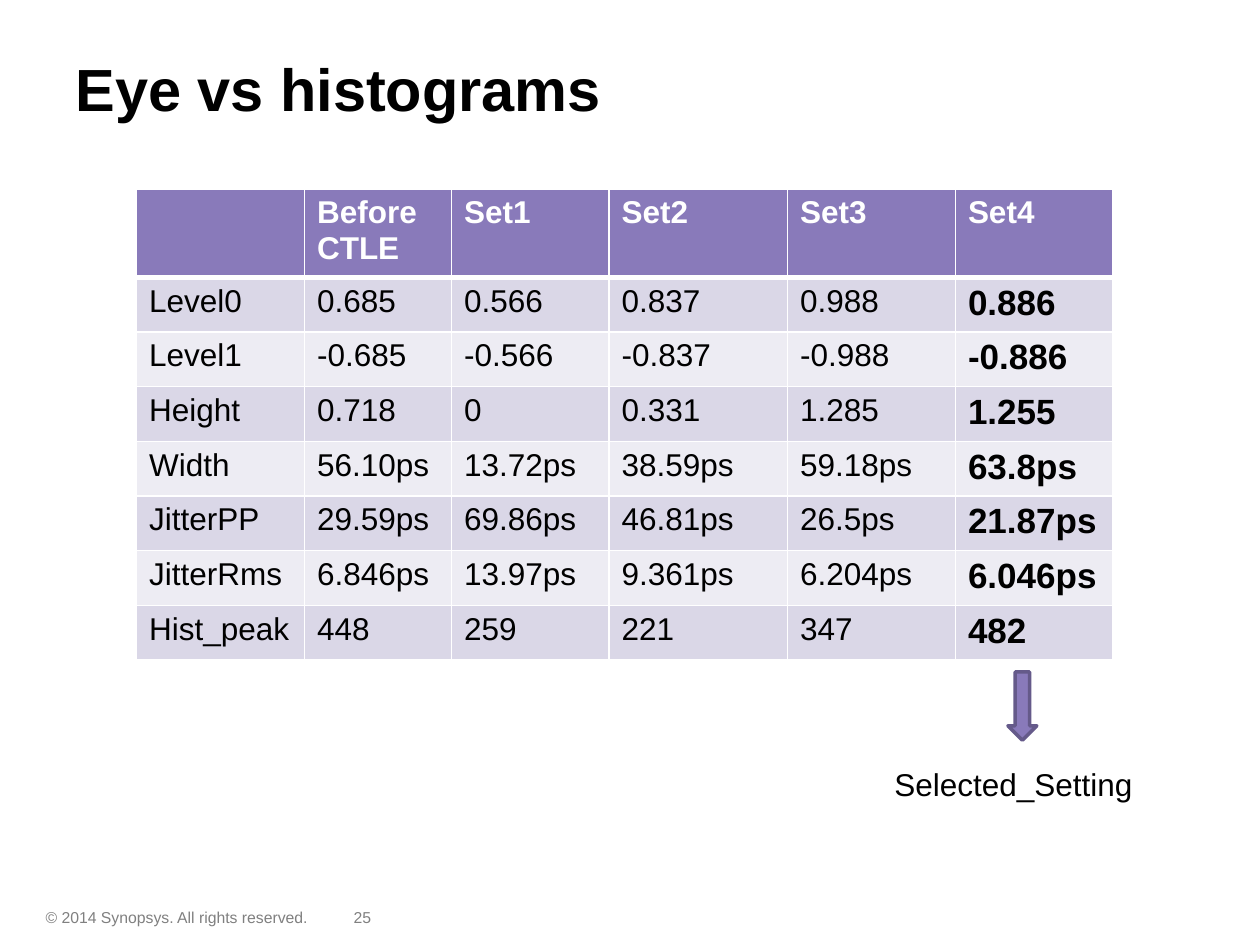
from lxml.etree import SubElement
from pptx import Presentation
from pptx.dml.color import RGBColor
from pptx.enum.shapes import MSO_SHAPE
from pptx.enum.text import MSO_ANCHOR, MSO_AUTO_SIZE, PP_ALIGN
from pptx.oxml.ns import qn
from pptx.util import Pt

BLACK = RGBColor(0x00, 0x00, 0x00)
WHITE = RGBColor(0xFF, 0xFF, 0xFF)
GREY = RGBColor(0x80, 0x80, 0x80)
PURPLE = RGBColor(0x89, 0x7A, 0xBA)
DARK_PURPLE = RGBColor(0x65, 0x5A, 0x8A)
BAND_DARK = RGBColor(0xDA, 0xD7, 0xE7)
BAND_LIGHT = RGBColor(0xED, 0xEC, 0xF3)

COLUMN_WIDTHS = [96, 84, 90, 102, 96, 90]
HEADER_HEIGHT = 46.5
ROW_HEIGHT = 29.5
MEASUREMENTS = [
    ["", "Before\nCTLE", "Set1", "Set2", "Set3", "Set4"],
    ["Level0", "0.685", "0.566", "0.837", "0.988", "0.886"],
    ["Level1", "-0.685", "-0.566", "-0.837", "-0.988", "-0.886"],
    ["Height", "0.718", "0", "0.331", "1.285", "1.255"],
    ["Width", "56.10ps", "13.72ps", "38.59ps", "59.18ps", "63.8ps"],
    ["JitterPP", "29.59ps", "69.86ps", "46.81ps", "26.5ps", "21.87ps"],
    ["JitterRms", "6.846ps", "13.97ps", "9.361ps", "6.204ps", "6.046ps"],
    ["Hist_peak", "448", "259", "221", "347", "482"],
]


def write_text(frame, text, size=18, color=BLACK, bold=False):
    """Fill a text frame with left-aligned lines in one format."""
    frame.text = text
    for paragraph in frame.paragraphs:
        paragraph.alignment = PP_ALIGN.LEFT
        font = paragraph.font
        font.name, font.size, font.bold = "Arial", Pt(size), bold
        font.color.rgb = color
        for span in paragraph.runs:
            span.font.name, span.font.size, span.font.bold = "Arial", Pt(size), bold
            span.font.color.rgb = color


def add_label(page, left, top, width, height, text, wrap=True, **text_format):
    """Add a text box with one label."""
    box = page.shapes.add_textbox(Pt(left), Pt(top), Pt(width), Pt(height))
    box.text_frame.word_wrap = wrap
    write_text(box.text_frame, text, **text_format)


def place_title(page, left, top, width, height, text):
    """Move and format the title placeholder."""
    title = page.shapes.title
    title.left, title.top = Pt(left), Pt(top)
    title.width, title.height = Pt(width), Pt(height)
    frame = title.text_frame
    frame.auto_size = MSO_AUTO_SIZE.NONE
    frame.vertical_anchor = MSO_ANCHOR.MIDDLE
    write_text(frame, text, size=34, bold=True)


def draw_borders(cell, **widths):
    """Give a cell white borders with a width for each side."""
    properties = cell._tc.get_or_add_tcPr()
    for side, width in widths.items():
        line = SubElement(properties, qn(f"a:ln{side}"), w=str(Pt(width)))
        fill = SubElement(line, qn("a:solidFill"))
        SubElement(fill, qn("a:srgbClr"), val=str(WHITE))


def add_measurements(page, left, top, rows):
    """Add the banded table with a header row and a bold last column."""
    heights = [HEADER_HEIGHT] + [ROW_HEIGHT] * (len(rows) - 1)
    table = page.shapes.add_table(
        len(rows), len(COLUMN_WIDTHS), Pt(left), Pt(top),
        Pt(sum(COLUMN_WIDTHS)), Pt(sum(heights))).table
    for column, width in zip(table.columns, COLUMN_WIDTHS):
        column.width = Pt(width)
    for row, height in zip(table.rows, heights):
        row.height = Pt(height)
    last = len(COLUMN_WIDTHS) - 1
    for i, values in enumerate(rows):
        header = i == 0
        band = PURPLE if header else BAND_DARK if i % 2 else BAND_LIGHT
        for j, value in enumerate(values):
            cell = table.cell(i, j)
            selected = j == last and not header
            draw_borders(cell, L=1, R=1, T=3 if i == 1 else 1, B=3 if header else 1)
            cell.fill.solid()
            cell.fill.fore_color.rgb = band
            write_text(cell.text_frame, value, size=20 if selected else 18,
                       color=WHITE if header else BLACK, bold=header or selected)


def add_selection(page, left, top, width, height):
    """Add the down arrow and the label below it."""
    arrow = page.shapes.add_shape(
        MSO_SHAPE.DOWN_ARROW, Pt(left + 72), Pt(top), Pt(16.5), Pt(39))
    arrow.shadow.inherit = False
    arrow.fill.solid()
    arrow.fill.fore_color.rgb = PURPLE
    arrow.line.color.rgb = DARK_PURPLE
    arrow.line.width = Pt(2)
    label_height = 29
    add_label(page, left, top + height - label_height, width, label_height,
              "Selected_Setting", wrap=False)


def add_footer(page, left, top, height):
    """Add the copyright line and the page number."""
    add_label(page, left, top, 222, height,
              "© 2014 Synopsys. All rights reserved.", size=9, color=GREY)
    add_label(page, left + 176, top, 50, height, "25", size=9, color=GREY)


def main():
    """Build the slide and save the deck."""
    deck = Presentation()
    deck.slide_width, deck.slide_height = Pt(720), Pt(540)
    page = deck.slides.add_slide(deck.slide_layouts[5])
    add_footer(page, 19, 515, 18)
    place_title(page, 36, 5, 684, 90, "Eye vs histograms")
    add_measurements(page, 78, 108, MEASUREMENTS)
    add_selection(page, 504, 384, 152, 78.5)
    deck.save("out.pptx")


if __name__ == "__main__":
    main()
